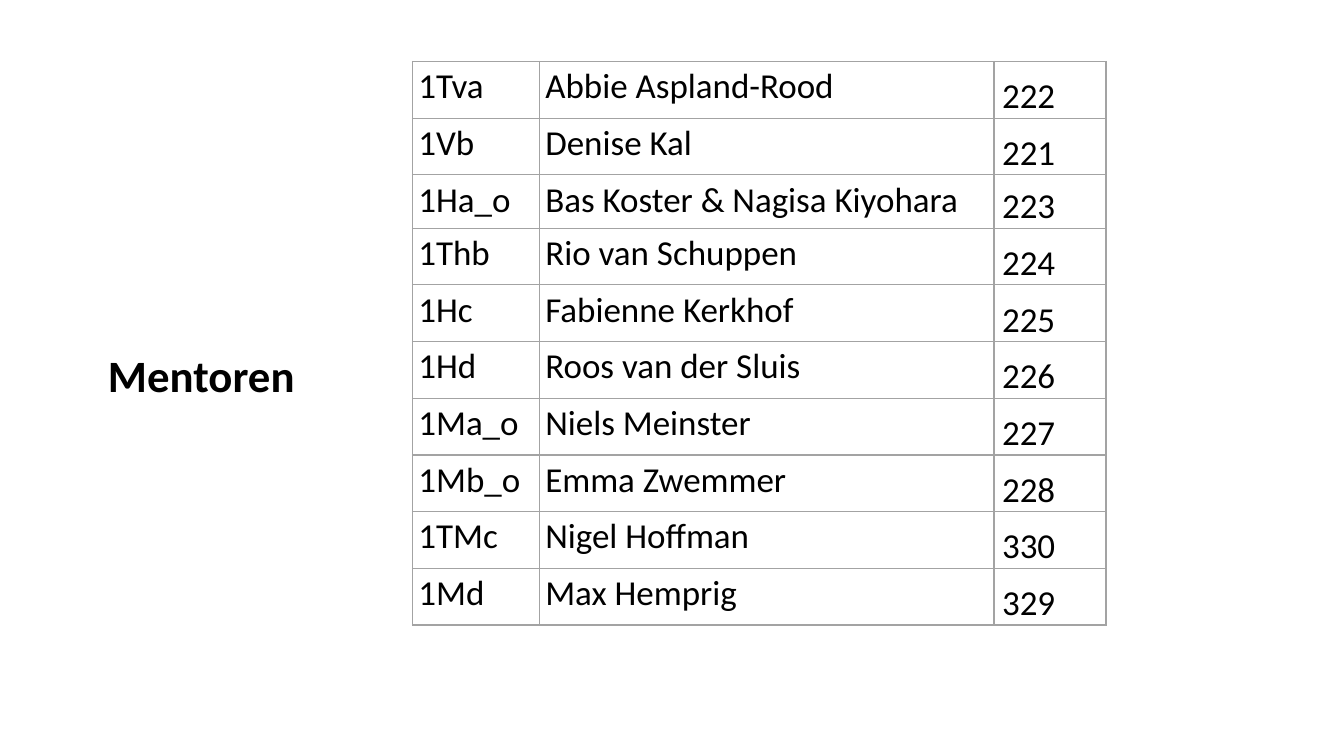
from lxml import etree
from pptx import Presentation, util as u
from pptx.dml.color import RGBColor
from pptx.enum import text
from pptx.oxml import ns

WIDE, HIGH = u.Inches(13.33), u.Inches(7.5)
FONT = "Calibri"
HEX = {"ink": "000000", "rule": "A3A3A3"}
MENTORS = [
    ("1Tva", "Abbie Aspland-Rood", "222"),
    ("1Vb", "Denise Kal", "221"),
    ("1Ha_o", "Bas Koster & Nagisa Kiyohara", "223"),
    ("1Thb", "Rio van Schuppen", "224"),
    ("1Hc", "Fabienne Kerkhof", "225"),
    ("1Hd", "Roos van der Sluis", "226"),
    ("1Ma_o", "Niels Meinster", "227"),
    ("1Mb_o", "Emma Zwemmer", "228"),
    ("1TMc", "Nigel Hoffman", "330"),
    ("1Md", "Max Hemprig", "329"),
]
# Shares of the slide, in percent
COLS = (9.45, 33.83, 8.33)
ROWS = [7.07 if "&" in name else 7.5 for _, name, _ in MENTORS]
ROOM = 2  # column of room numbers


def across(share):
    return round(WIDE * share / 100)


def down(share):
    return round(HIGH * share / 100)


def style(par, size, bold=False):
    font = par.runs[0].font
    font.name, font.size, font.bold = FONT, u.Pt(size), bold
    font.color.rgb = RGBColor.from_string(HEX["ink"])


def border(cell):
    props = cell._tc.get_or_add_tcPr()
    for pos, side in enumerate(("lnL", "lnR", "lnT", "lnB")):
        line = etree.Element(ns.qn("a:" + side), w=str(u.Pt(1)))
        fill = etree.SubElement(line, ns.qn("a:solidFill"))
        etree.SubElement(fill, ns.qn("a:srgbClr"), val=HEX["rule"])
        props.insert(pos, line)


def fill_cell(cell, words, room):
    cell.text_frame.text = words
    style(cell.text_frame.paragraphs[0], 25)
    side, edge = (0.08, 0) if room else (0.06, 0.04)
    cell.margin_left = cell.margin_right = u.Inches(side)
    cell.margin_top = cell.margin_bottom = u.Inches(edge)
    anchor = text.MSO_ANCHOR
    cell.vertical_anchor = anchor.BOTTOM if room else anchor.TOP
    cell.fill.background()
    border(cell)


def add_title(slide, words):
    title = slide.shapes.title
    title.left, title.top = across(7.28), down(19.07)
    title.width, title.height = across(26.86), down(61.73)
    frame = title.text_frame
    frame.text = words
    frame.word_wrap = True
    frame.vertical_anchor = text.MSO_ANCHOR.MIDDLE
    par = frame.paragraphs[0]
    par.alignment = text.PP_ALIGN.LEFT
    par.line_spacing = 0.9
    style(par, 32, bold=True)


def add_grid(slide, data):
    table = slide.shapes.add_table(
        len(data), len(COLS), across(30.68), down(8.13),
        across(sum(COLS)), down(sum(ROWS))).table
    table.first_row = table.horz_banding = False
    for col, share in zip(table.columns, COLS):
        col.width = across(share)
    for row, share, line in zip(table.rows, ROWS, data):
        row.height = down(share)
        for pos, words in enumerate(line):
            fill_cell(row.cells[pos], words, pos == ROOM)


def main():
    deck = Presentation()
    deck.slide_width, deck.slide_height = WIDE, HIGH
    slide = deck.slides.add_slide(deck.slide_layouts.get_by_name("Title Only"))
    add_title(slide, "Mentoren")
    add_grid(slide, MENTORS)
    deck.save("out.pptx")


if __name__ == "__main__":
    main()
